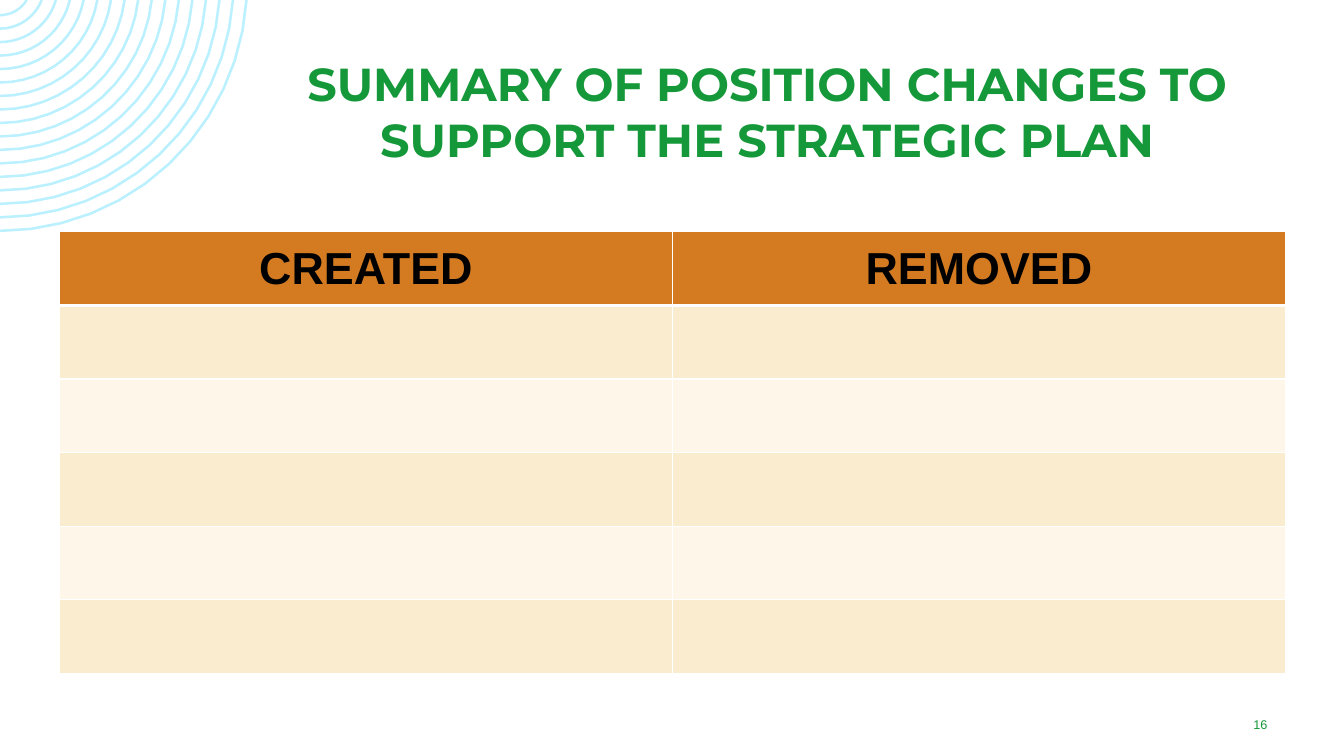
from dataclasses import dataclass
from math import asin, cos, pi, sin

from lxml.etree import SubElement
from pptx import Presentation
from pptx.dml.color import RGBColor
from pptx.enum.text import MSO_ANCHOR, MSO_AUTO_SIZE, PP_ALIGN
from pptx.oxml.ns import qn
from pptx.util import Inches, Pt


@dataclass(frozen=True)
class Theme:
    green: str = "159839"
    orange: str = "D47B22"
    bands: tuple[str, str] = ("FAEDCF", "FDF6E9")
    arc: str = "BBF0FF"
    border: str = "FFFFFF"
    black: str = "000000"
    title_font: str = "Montserrat"
    body_font: str = "Arial"
    title_size: int = 33
    header_size: int = 32
    number_size: int = 9


@dataclass(frozen=True)
class Rings:
    """Concentric arcs centred above the slide's top left corner."""
    count: int = 17
    radius: float = 2.45
    smallest: float = 0.31
    line_points: float = 1.8
    rise: float = 0.16
    segments: int = 12

    def arc(self, index: int) -> list[tuple[int, int]]:
        """Points from the slide's top edge round to its left edge."""
        step = (self.radius - self.smallest) / (self.count - 1)
        radius = self.radius - index * step
        start = asin(self.rise / radius)
        angles = [start + (pi / 2 - start) * i / self.segments
                  for i in range(self.segments + 1)]
        return [(Inches(radius * cos(angle)), Inches(radius * sin(angle) - self.rise))
                for angle in angles]


THEME = Theme()
HEADERS = ("CREATED", "REMOVED")
ROW_COUNT = 6
TABLE_WIDTH = 12.16
ROW_HEIGHT = 0.73


def style_paragraph(paragraph, font: str, size: int, color: str, bold: bool = False) -> None:
    paragraph.alignment = PP_ALIGN.CENTER
    paragraph.font.name = font
    paragraph.font.size = Pt(size)
    paragraph.font.bold = bold
    paragraph.font.color.rgb = RGBColor.from_string(color)


def add_rings(slide, rings: Rings) -> None:
    builder = slide.shapes.build_freeform(0, 0)
    for index in range(rings.count):
        first, *rest = rings.arc(index)
        builder.move_to(*first)
        builder.add_line_segments(rest, close=False)
    shape = builder.convert_to_shape()
    shape.shadow.inherit = False
    shape.fill.background()
    shape.line.color.rgb = RGBColor.from_string(THEME.arc)
    shape.line.width = Pt(rings.line_points)


def add_title(slide) -> None:
    title = slide.shapes.title
    title.left, title.top = Inches(2.46), Inches(0.5)
    title.width, title.height = Inches(10.3), Inches(1.47)
    frame = title.text_frame
    frame.text = "SUMMARY OF POSITION CHANGES TO SUPPORT THE STRATEGIC PLAN"
    frame.word_wrap = True
    frame.auto_size = MSO_AUTO_SIZE.NONE
    frame.vertical_anchor = MSO_ANCHOR.TOP
    style_paragraph(frame.paragraphs[0], THEME.title_font, THEME.title_size,
                    THEME.green, bold=True)


def format_cell(cell, fill: str, top: int, bottom: int) -> None:
    """Fill a cell and draw its borders; top and bottom are widths in points."""
    properties = cell._tc.get_or_add_tcPr()
    for side, width in (("L", 1), ("R", 1), ("T", top), ("B", bottom)):
        line = SubElement(properties, qn(f"a:ln{side}"), w=str(Pt(width)))
        line_fill = SubElement(line, qn("a:solidFill"))
        SubElement(line_fill, qn("a:srgbClr"), val=THEME.border)
    cell.fill.solid()
    cell.fill.fore_color.rgb = RGBColor.from_string(fill)


def add_position_table(slide) -> None:
    table = slide.shapes.add_table(
        ROW_COUNT, len(HEADERS), Inches(0.59), Inches(2.3),
        Inches(TABLE_WIDTH), Inches(ROW_HEIGHT * ROW_COUNT)).table
    for row_index, row in enumerate(table.rows):
        row.height = Inches(ROW_HEIGHT)
        is_header = row_index == 0
        fill = THEME.orange if is_header else THEME.bands[(row_index - 1) % 2]
        for cell in row.cells:
            format_cell(cell, fill, top=3 if row_index == 1 else 1,
                        bottom=3 if is_header else 1)
    for cell, header in zip(table.rows[0].cells, HEADERS):
        cell.text = header
        cell.vertical_anchor = MSO_ANCHOR.MIDDLE
        style_paragraph(cell.text_frame.paragraphs[0], THEME.body_font,
                        THEME.header_size, THEME.black, bold=True)


def add_slide_number(slide) -> None:
    box = slide.shapes.add_textbox(Inches(11.96), Inches(7.04), Inches(1.08), Inches(0.3))
    frame = box.text_frame
    frame.word_wrap = True
    frame.vertical_anchor = MSO_ANCHOR.MIDDLE
    frame.text = "16"
    style_paragraph(frame.paragraphs[0], THEME.body_font, THEME.number_size, THEME.green)


def main() -> None:
    presentation = Presentation()
    presentation.slide_width, presentation.slide_height = Inches(13.33), Inches(7.5)
    slide = presentation.slides.add_slide(presentation.slide_layouts[5])
    add_rings(slide, Rings())
    add_title(slide)
    add_position_table(slide)
    add_slide_number(slide)
    presentation.save("out.pptx")


if __name__ == "__main__":
    main()
